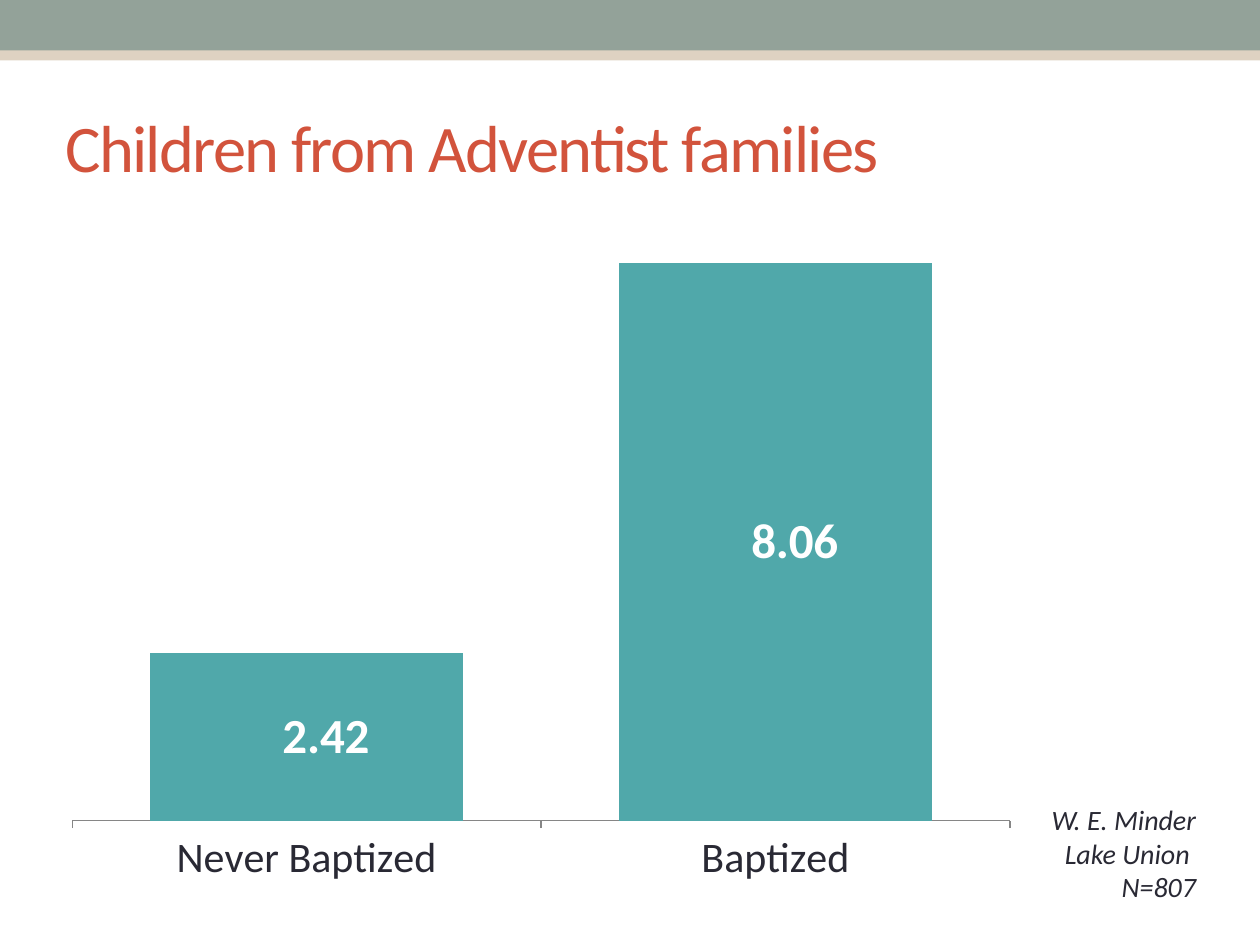
from dataclasses import dataclass

from lxml import etree
from pptx import Presentation
from pptx.chart.data import CategoryChartData
from pptx.dml.color import RGBColor
from pptx.enum.chart import XL_CHART_TYPE, XL_LABEL_POSITION, XL_TICK_MARK
from pptx.enum.shapes import MSO_SHAPE
from pptx.enum.text import MSO_ANCHOR, PP_ALIGN
from pptx.oxml.ns import qn
from pptx.util import Inches, Pt

STACKED = XL_CHART_TYPE.COLUMN_STACKED
CENTER = XL_LABEL_POSITION.CENTER
TICK_OUT, TICK_NONE = XL_TICK_MARK.OUTSIDE, XL_TICK_MARK.NONE
RECT = MSO_SHAPE.RECTANGLE
MIDDLE, BOTTOM = MSO_ANCHOR.MIDDLE, MSO_ANCHOR.BOTTOM
LEFT, RIGHT = PP_ALIGN.LEFT, PP_ALIGN.RIGHT


@dataclass(frozen=True)
class Theme:
    font: str = "Calibri"
    title: RGBColor = RGBColor(0xD2, 0x53, 0x3C)
    text: RGBColor = RGBColor(0x29, 0x29, 0x34)
    band: RGBColor = RGBColor(0x93, 0xA2, 0x99)
    stripe: RGBColor = RGBColor(0xDE, 0xD2, 0xC2)
    bar: RGBColor = RGBColor(0x50, 0xA8, 0xAA)
    axis: RGBColor = RGBColor(0x86, 0x86, 0x86)
    white: RGBColor = RGBColor(0xFF, 0xFF, 0xFF)
    title_size: Pt = Pt(38)
    label_size: Pt = Pt(28)
    category_size: Pt = Pt(24)
    chart_size: Pt = Pt(18)
    source_size: Pt = Pt(16)


THEME = Theme()


def style_font(font, size, color):
    font.name = THEME.font
    font.size = size
    font.color.rgb = color


def add_header(slide, left, top, width, height):
    """Green band with the lower edge of a beige stripe showing below it."""
    offset = Inches(0.08)
    for y, color in ((top + offset, THEME.stripe), (top, THEME.band)):
        sp = slide.shapes.add_shape(RECT, left, y, width, height - offset)
        sp.shadow.inherit = False
        sp.fill.solid()
        sp.fill.fore_color.rgb = color
        sp.line.fill.background()


def add_text(slide, box, lines, size, color, align, anchor):
    tf = slide.shapes.add_textbox(*box).text_frame
    tf.word_wrap = True
    tf.vertical_anchor = anchor
    tf.text = "\n".join(lines)
    for p in tf.paragraphs:
        p.alignment = align
        style_font(p.font, size, color)
    return tf


def add_title(slide, *box):
    tf = add_text(slide, box, ["Children from Adventist families"],
                  THEME.title_size, THEME.title, LEFT, MIDDLE)
    for r in tf.paragraphs[0].runs:
        r.font._element.set("spc", "-100") if hasattr(r.font, "_element") else \
            r._r.get_or_add_rPr().set("spc", "-100")


def add_source(slide, *box):
    tf = add_text(slide, box, ["W. E. Minder", "Lake Union ", "N=807"],
                  THEME.source_size, THEME.text, RIGHT, BOTTOM)
    for p in tf.paragraphs:
        p.font.italic = True


def add_layout(parent, index, **values):
    """Insert a manual chart layout as the given child of parent."""
    layout = etree.Element(qn("c:layout"))
    manual = etree.SubElement(layout, qn("c:manualLayout"))
    for name, value in values.items():
        etree.SubElement(manual, qn(f"c:{name}")).set("val", str(value))
    parent.insert(index, layout)


def add_baptism_chart(slide, *box):
    data = CategoryChartData(number_format="#,##0.00")
    data.categories = ["Never Baptized", "Baptized"]
    data.add_series("Series 1", (2.42, 8.06))
    chart = slide.shapes.add_chart(STACKED, *box, data).chart
    chart.has_legend = chart.has_title = False
    style_font(chart.font, THEME.chart_size, THEME.text)

    axis = chart.category_axis
    axis.major_tick_mark, axis.minor_tick_mark = TICK_OUT, TICK_NONE
    axis.format.line.color.rgb = THEME.axis
    style_font(axis.tick_labels.font, THEME.category_size, THEME.text)
    values = chart.value_axis
    values.visible = values.has_major_gridlines = False
    values.minimum_scale, values.maximum_scale = 0, 9

    plot = chart.plots[0]
    plot.gap_width, plot.overlap = 50, 100
    plot.vary_by_categories = False
    series = plot.series[0]
    series.format.fill.solid()
    series.format.fill.fore_color.rgb = THEME.bar
    for i in range(len(plot.categories)):
        label = series.points[i].data_label
        style_font(label.font, THEME.label_size, THEME.white)
        label.font.bold = True
        label.position = CENTER

    root = chart.element
    for label in root.iter(qn("c:dLbl")):
        add_layout(label, 1, x=0.017, y=0)
    area = next(root.iter(qn("c:plotArea")))
    for old in area.findall(qn("c:layout")):
        area.remove(old)
    add_layout(area, 0, layoutTarget="inner", xMode="edge", yMode="edge",
               x=0.017, y=0.007, w=0.827, h=0.869)


def main():
    prs = Presentation()
    prs.slide_width, prs.slide_height = Inches(10), Inches(7.5)
    slide = prs.slides.add_slide(prs.slide_layouts[6])
    margin = Inches(0.42)
    add_header(slide, 0, 0, prs.slide_width, Inches(0.48))
    add_title(slide, margin, Inches(0.55), Inches(9.17), Inches(1.21))
    add_baptism_chart(slide, margin, Inches(1.53), Inches(9), Inches(5.69))
    add_source(slide, Inches(7.34), Inches(6.04), Inches(2.25), Inches(1.18))
    prs.save("out.pptx")


if __name__ == "__main__":
    main()
